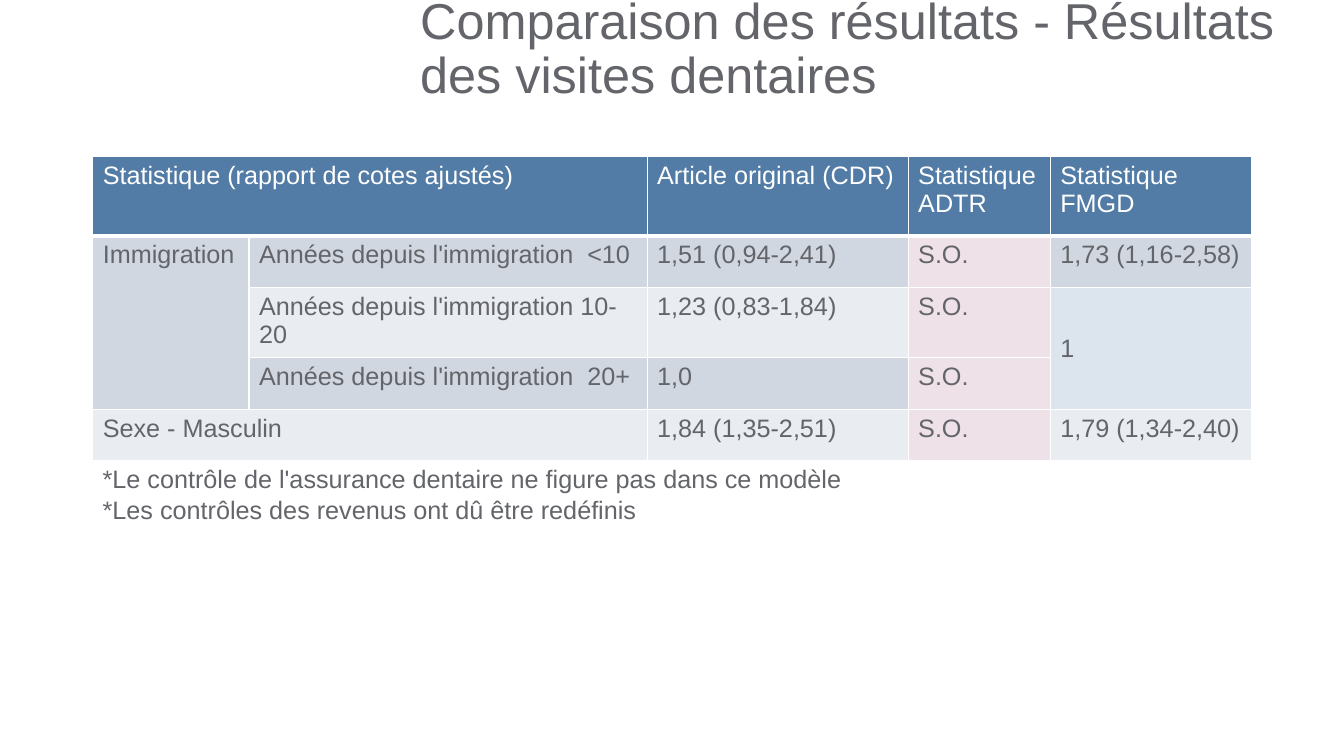
from lxml.etree import SubElement
from pptx import Presentation
from pptx.dml.color import RGBColor
from pptx.enum.text import MSO_ANCHOR
from pptx.oxml.ns import qn
from pptx.util import Pt

GREY, WHITE, BLUE = "63656A", "FFFFFF", "527CA6"
DARK_BAND, LIGHT_BAND, PINK, PALE_BLUE = "D1D7E1", "E9ECF1", "EFE1E8", "DCE5EE"

COLUMN_WIDTHS = [111.6, 284.4, 186.48, 101.52, 144]
ROW_HEIGHTS = [56.88, 36.72, 36.72, 36.72, 36.72]
ROWS = [
    ["Statistique (rapport de cotes ajustés)", "", "Article original (CDR)",
     "Statistique ADTR", "Statistique FMGD"],
    ["Immigration", "Années depuis l'immigration  <10", "1,51 (0,94-2,41)",
     "S.O.", "1,73 (1,16-2,58)"],
    ["", "Années depuis l'immigration 10-20", "1,23 (0,83-1,84)", "S.O.", "1"],
    ["", "Années depuis l'immigration  20+", "1,0", "S.O.", ""],
    ["Sexe - Masculin", "", "1,84 (1,35-2,51)", "S.O.", "1,79 (1,34-2,40)"],
]
MERGES = [((0, 0), (0, 1)), ((1, 0), (3, 0)), ((2, 4), (3, 4)), ((4, 0), (4, 1))]
SPECIAL_FILLS = {(2, 0): DARK_BAND, (2, 4): PALE_BLUE, (3, 4): PALE_BLUE}


def color(value):
    """Turn a hex string into a colour."""
    return RGBColor.from_string(value)


def write(frame, text, size=18, ink=GREY, anchor=MSO_ANCHOR.TOP, spacing=1.0):
    """Fill a text frame with one paragraph per line of text."""
    frame.word_wrap = True
    frame.vertical_anchor = anchor
    for index, line in enumerate(text.split("\n")):
        para = frame.add_paragraph() if index else frame.paragraphs[0]
        para.line_spacing = spacing
        span = para.add_run()
        span.text = line
        span.font.name = "Arial"
        span.font.size = Pt(size)
        span.font.color.rgb = color(ink)


def add_text(page, left, top, width, height, text, **style):
    """Add a text box at a place given in points."""
    box = page.shapes.add_textbox(Pt(left), Pt(top), Pt(width), Pt(height))
    write(box.text_frame, text, **style)


def set_borders(cell, bottom_width):
    """Draw white borders around a cell."""
    properties = cell._tc.get_or_add_tcPr()
    widths = {"a:lnL": 1, "a:lnR": 1, "a:lnT": 1, "a:lnB": bottom_width}
    for tag, width in widths.items():
        line = SubElement(properties, qn(tag), w=str(Pt(width)))
        fill = SubElement(line, qn("a:solidFill"))
        SubElement(fill, qn("a:srgbClr"), val=WHITE)


def cell_fill(row, column):
    """Choose the fill of a cell from its row and column."""
    if row == 0:
        return BLUE
    if column == 3:
        return PINK
    band = DARK_BAND if row % 2 else LIGHT_BAND
    return SPECIAL_FILLS.get((row, column), band)


def add_results_table(page, left, top):
    """Add the table of odds ratios."""
    frame = page.shapes.add_table(
        len(ROWS), len(COLUMN_WIDTHS), Pt(left), Pt(top),
        Pt(sum(COLUMN_WIDTHS)), Pt(sum(ROW_HEIGHTS)))
    table = frame.table
    for column, width in zip(table.columns, COLUMN_WIDTHS):
        column.width = Pt(width)
    for row, height in zip(table.rows, ROW_HEIGHTS):
        row.height = Pt(height)
    for first, last in MERGES:
        table.cell(*first).merge(table.cell(*last))
    for row, texts in enumerate(ROWS):
        for column, text in enumerate(texts):
            cell = table.cell(row, column)
            set_borders(cell, bottom_width=1 if row else 3)
            cell.fill.solid()
            cell.fill.fore_color.rgb = color(cell_fill(row, column))
            if text:
                write(cell.text_frame, text, ink=GREY if row else WHITE)
    table.cell(2, 4).vertical_anchor = MSO_ANCHOR.MIDDLE


def main():
    """Build the slide and save it."""
    deck = Presentation()
    deck.slide_width, deck.slide_height = Pt(960), Pt(540)
    page = deck.slides.add_slide(deck.slide_layouts[6])
    add_text(page, 293.04, 8.64, 638.64, 54.72,
             "Comparaison des résultats - Résultats des visites dentaires",
             size=36, anchor=MSO_ANCHOR.MIDDLE, spacing=0.9)
    add_text(page, 66.24, 327.6, 762.48, 51.12,
             "*Le contrôle de l'assurance dentaire ne figure pas dans ce modèle\n"
             "*Les contrôles des revenus ont dû être redéfinis")
    add_results_table(page, 66.24, 111.6)
    deck.save("out.pptx")


if __name__ == "__main__":
    main()
